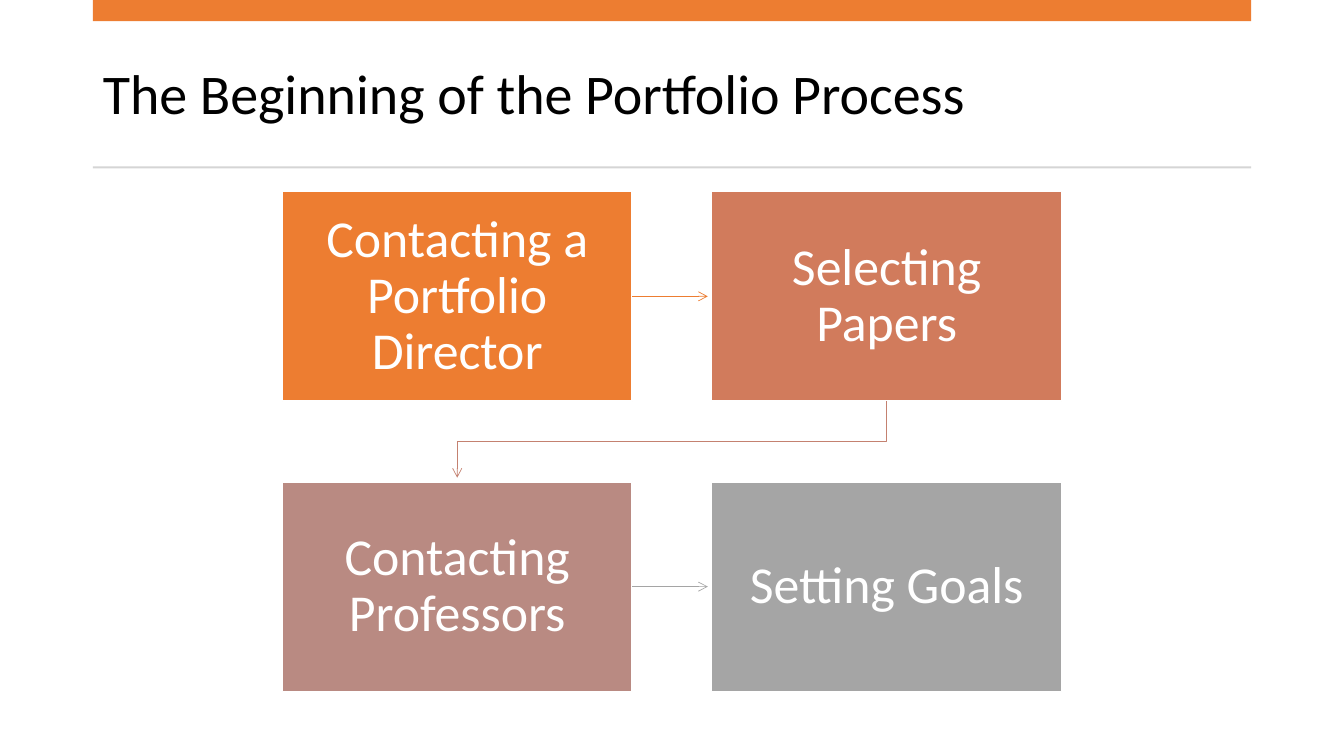
from dataclasses import dataclass

import pptx
import pptx.dml.color
import pptx.enum.shapes
import pptx.enum.text
import pptx.oxml
import pptx.oxml.ns
import pptx.util
from pptx.util import Inches


@dataclass(frozen=True)
class Theme:
    font: str = "Calibri"
    title_size: int = 40
    step_size: int = 37
    title: str = "000000"
    step_text: str = "FFFFFF"
    accent: str = "ED7D31"
    rule: str = "D5D5D5"
    return_arrow: str = "C48170"
    last_arrow: str = "A5A5A5"


THEME = Theme()

# Margins shared by the title, the top band and the rule
LEFT, WIDTH = 0.92, 11.49

# Two-by-two grid of steps
STEP_W, STEP_H = 3.47, 2.08
COLUMNS = (2.8, 7.06)
ROWS = (1.9, 4.78)
ARROW_GAP = 0.04
STEPS = (
    ("Contacting a Portfolio Director", "ED7D31"),
    ("Selecting Papers", "D17B5C"),
    ("Contacting Professors", "B98A82"),
    ("Setting Goals", "A5A5A5"),
)


def rgb(code):
    return pptx.dml.color.RGBColor.from_string(code)


def format_text(frame, text, size, color, align):
    frame.text = text
    frame.word_wrap = True
    frame.auto_size = pptx.enum.text.MSO_AUTO_SIZE.NONE
    frame.vertical_anchor = pptx.enum.text.MSO_ANCHOR.MIDDLE
    paragraph = frame.paragraphs[0]
    paragraph.alignment = align
    paragraph.line_spacing = 0.9
    paragraph.font.name = THEME.font
    paragraph.font.size = pptx.util.Pt(size)
    paragraph.font.color.rgb = rgb(color)


def add_title(slide, text):
    title = slide.shapes.title
    title.left, title.top = Inches(LEFT), Inches(0.37)
    title.width, title.height = Inches(WIDTH), Inches(1.18)
    format_text(title.text_frame, text, THEME.title_size, THEME.title,
                pptx.enum.text.PP_ALIGN.LEFT)


def add_block(slide, left, top, width, height, color):
    block = slide.shapes.add_shape(
        pptx.enum.shapes.MSO_SHAPE.RECTANGLE,
        Inches(left), Inches(top), Inches(width), Inches(height))
    block.shadow.inherit = False
    block.fill.solid()
    block.fill.fore_color.rgb = rgb(color)
    block.line.fill.background()
    return block


def add_step(slide, left, top, text, color):
    step = add_block(slide, left, top, STEP_W, STEP_H, color)
    step.line.color.rgb = rgb(THEME.step_text)
    step.line.width = pptx.util.Pt(1)
    frame = step.text_frame
    frame.margin_left = frame.margin_right = Inches(0.17)
    frame.margin_top = frame.margin_bottom = Inches(0.18)
    format_text(frame, text, THEME.step_size, THEME.step_text,
                pptx.enum.text.PP_ALIGN.CENTER)


def style_arrow(arrow, color):
    arrow.line.color.rgb = rgb(color)
    arrow.line.width = pptx.util.Pt(0.5)
    head = pptx.oxml.parse_xml(
        '<a:tailEnd %s type="arrow"/>' % pptx.oxml.ns.nsdecls("a"))
    arrow.line._get_or_add_ln().append(head)


def add_row_arrow(slide, top, color):
    y = Inches(top + STEP_H / 2)
    arrow = slide.shapes.add_connector(
        pptx.enum.shapes.MSO_CONNECTOR.STRAIGHT,
        Inches(COLUMNS[0] + STEP_W), y, Inches(COLUMNS[1] - ARROW_GAP), y)
    style_arrow(arrow, color)
    arrow._element.spPr.append(
        pptx.oxml.parse_xml('<a:effectLst %s/>' % pptx.oxml.ns.nsdecls("a")))


def add_return_arrow(slide, color):
    """Leads from the end of the first row to the start of the second."""
    first_x, last_x = (Inches(left + STEP_W / 2) for left in COLUMNS)
    start_y = Inches(ROWS[0] + STEP_H)
    turn_y = Inches((ROWS[0] + STEP_H + ROWS[1]) / 2)
    end_y = Inches(ROWS[1] - ARROW_GAP)
    route = slide.shapes.build_freeform(last_x, start_y)
    route.add_line_segments(
        [(last_x, turn_y), (first_x, turn_y), (first_x, end_y)], close=False)
    arrow = route.convert_to_shape()
    arrow.shadow.inherit = False
    arrow.fill.background()
    style_arrow(arrow, color)


def main():
    deck = pptx.Presentation()
    deck.slide_width, deck.slide_height = Inches(13.33), Inches(7.5)
    slide = deck.slides.add_slide(deck.slide_layouts.get_by_name("Title Only"))

    # Heading
    add_title(slide, "The Beginning of the Portfolio Process")
    add_block(slide, LEFT, 0, WIDTH, 0.21, THEME.accent)
    add_block(slide, LEFT, 1.65, WIDTH, 0.02, THEME.rule)

    # Process steps, row by row
    for index, (text, color) in enumerate(STEPS):
        row, column = divmod(index, len(COLUMNS))
        add_step(slide, COLUMNS[column], ROWS[row], text, color)

    # Arrows between the steps
    add_row_arrow(slide, ROWS[0], THEME.accent)
    add_return_arrow(slide, THEME.return_arrow)
    add_row_arrow(slide, ROWS[1], THEME.last_arrow)

    deck.save("out.pptx")


if __name__ == "__main__":
    main()
